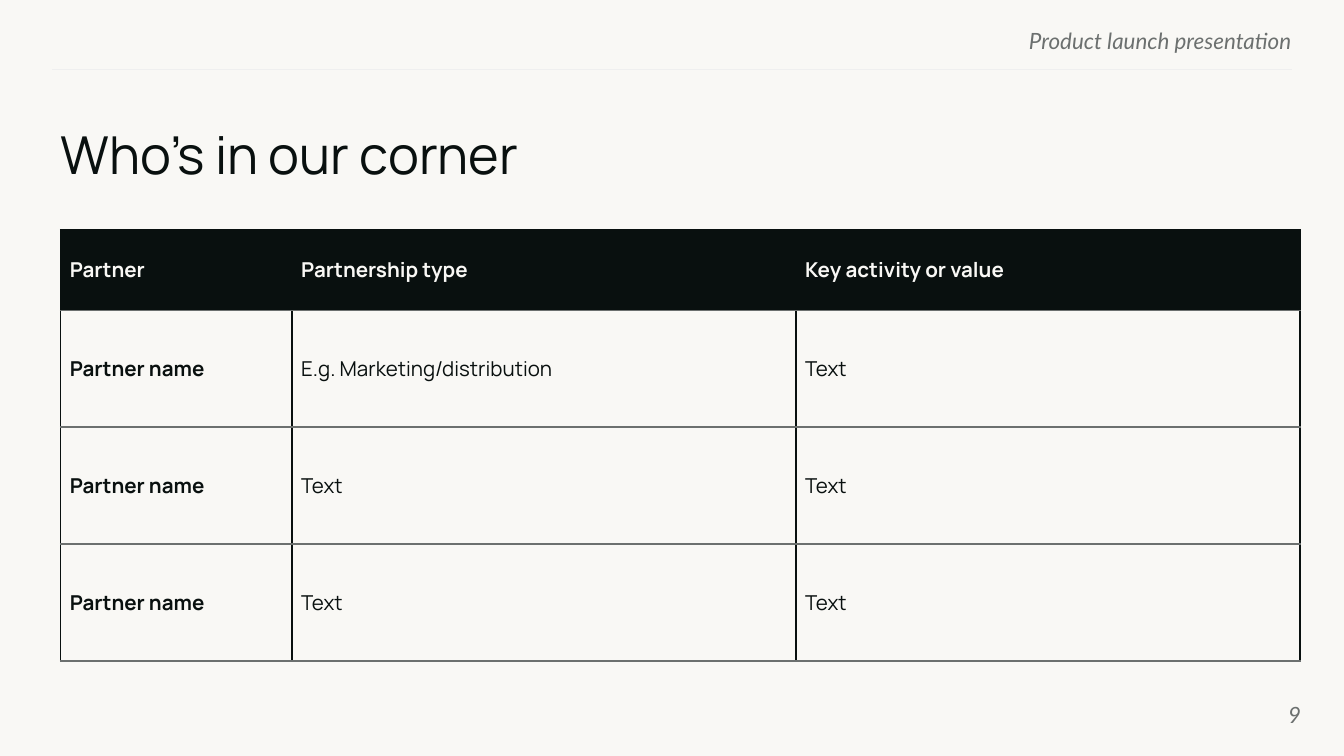
from lxml import etree
from pptx import Presentation
from pptx.dml.color import RGBColor
from pptx.enum import shapes, text
from pptx.oxml.ns import qn
from pptx.util import Pt

INK, PAPER, GREY, RULE = "09100F", "F9F8F5", "6C706F", "EFEFEF"
COLUMNS = (124, 270, 270)
ROWS = (43.2, 62.6, 62.6, 62.6)
PARTNERS = (
    ("Partner", "Partnership type", "Key activity or value"),
    ("Partner name", "E.g. Marketing/distribution", "Text"),
    ("Partner name", "Text", "Text"),
    ("Partner name", "Text", "Text"),
)


def rgb(color):
    return RGBColor.from_string(color)


def write(tf, content, size=12, font="Manrope", color=INK, bold=False,
          italic=False, align=text.PP_ALIGN.LEFT, after=0):
    p = tf.paragraphs[0]
    p.alignment = align
    p.space_after = Pt(after)
    r = p.add_run()
    r.text = content
    r.font.size = Pt(size)
    r.font.name = font
    r.font.bold = bold
    r.font.italic = italic
    r.font.color.rgb = rgb(color)


def setup_frame(tf, anchor):
    tf.margin_left = tf.margin_right = tf.margin_top = tf.margin_bottom = 0
    tf.word_wrap = True
    tf.auto_size = text.MSO_AUTO_SIZE.NONE
    tf.vertical_anchor = anchor


def add_title(slide, content, left, top, width, height):
    sp = slide.shapes.title
    sp.left, sp.top, sp.width, sp.height = map(Pt, (left, top, width, height))
    setup_frame(sp.text_frame, text.MSO_ANCHOR.TOP)
    write(sp.text_frame, content, size=28, after=10)


def add_label(slide, content, left, top, width, height, anchor):
    sp = slide.shapes.add_textbox(Pt(left), Pt(top), Pt(width), Pt(height))
    setup_frame(sp.text_frame, anchor)
    write(sp.text_frame, content, font="Lato", color=GREY, italic=True,
          align=text.PP_ALIGN.RIGHT)


def add_rule(slide, left, right, y):
    line = slide.shapes.add_connector(
        shapes.MSO_CONNECTOR.STRAIGHT, Pt(left), Pt(y), Pt(right), Pt(y))
    line.line.color.rgb = rgb(RULE)
    line.line.width = Pt(0.75)
    etree.SubElement(line._element.spPr, qn("a:effectLst"))


def set_border(cell, side, color, width):
    tc_pr = cell._tc.get_or_add_tcPr()
    ln = etree.SubElement(tc_pr, qn(f"a:ln{side}"), w=str(Pt(width)))
    fill = etree.SubElement(ln, qn("a:solidFill"))
    etree.SubElement(fill, qn("a:srgbClr"), val=color)


def format_cell(cell, content, header, bold):
    cell.margin_left = cell.margin_right = Pt(5)
    cell.margin_top = cell.margin_bottom = Pt(5)
    cell.vertical_anchor = text.MSO_ANCHOR.MIDDLE
    write(cell.text_frame, content, size=11, bold=bold,
          color=PAPER if header else INK)
    for side in "LR":
        set_border(cell, side, INK, 0.75)
    if header:
        set_border(cell, "T", INK, 0.75)
    else:
        set_border(cell, "T", GREY, 1)
    set_border(cell, "B", GREY, 1)
    if header:
        cell.fill.solid()
        cell.fill.fore_color.rgb = rgb(INK)
    else:
        cell.fill.background()


def add_partner_table(slide, left, top):
    frame = slide.shapes.add_table(
        len(ROWS), len(COLUMNS), Pt(left), Pt(top),
        Pt(sum(COLUMNS)), Pt(sum(ROWS)))
    table = frame.table
    table.horz_banding = False
    for column, width in zip(table.columns, COLUMNS):
        column.width = Pt(width)
    for row, height in zip(table.rows, ROWS):
        row.height = Pt(height)
    for i, partner in enumerate(PARTNERS):
        for j, content in enumerate(partner):
            format_cell(table.cell(i, j), content, header=i == 0,
                        bold=i == 0 or j == 0)


def main():
    prs = Presentation()
    prs.slide_width, prs.slide_height = Pt(720), Pt(405)
    slide = prs.slides.add_slide(prs.slide_layouts[5])
    slide.background.fill.solid()
    slide.background.fill.fore_color.rgb = rgb(PAPER)

    add_rule(slide, 28, 692, 37.2)
    add_label(slide, "Product launch presentation", 414.7, 14.4, 277.2, 13,
              text.MSO_ANCHOR.TOP)
    add_title(slide, "Who’s in our corner", 32.4, 65.5, 664.5, 36.7)
    add_label(slide, "9", 653.8, 367.2, 43.2, 31, text.MSO_ANCHOR.MIDDLE)
    add_partner_table(slide, 32.4, 123.1)
    prs.save("out.pptx")


if __name__ == "__main__":
    main()
